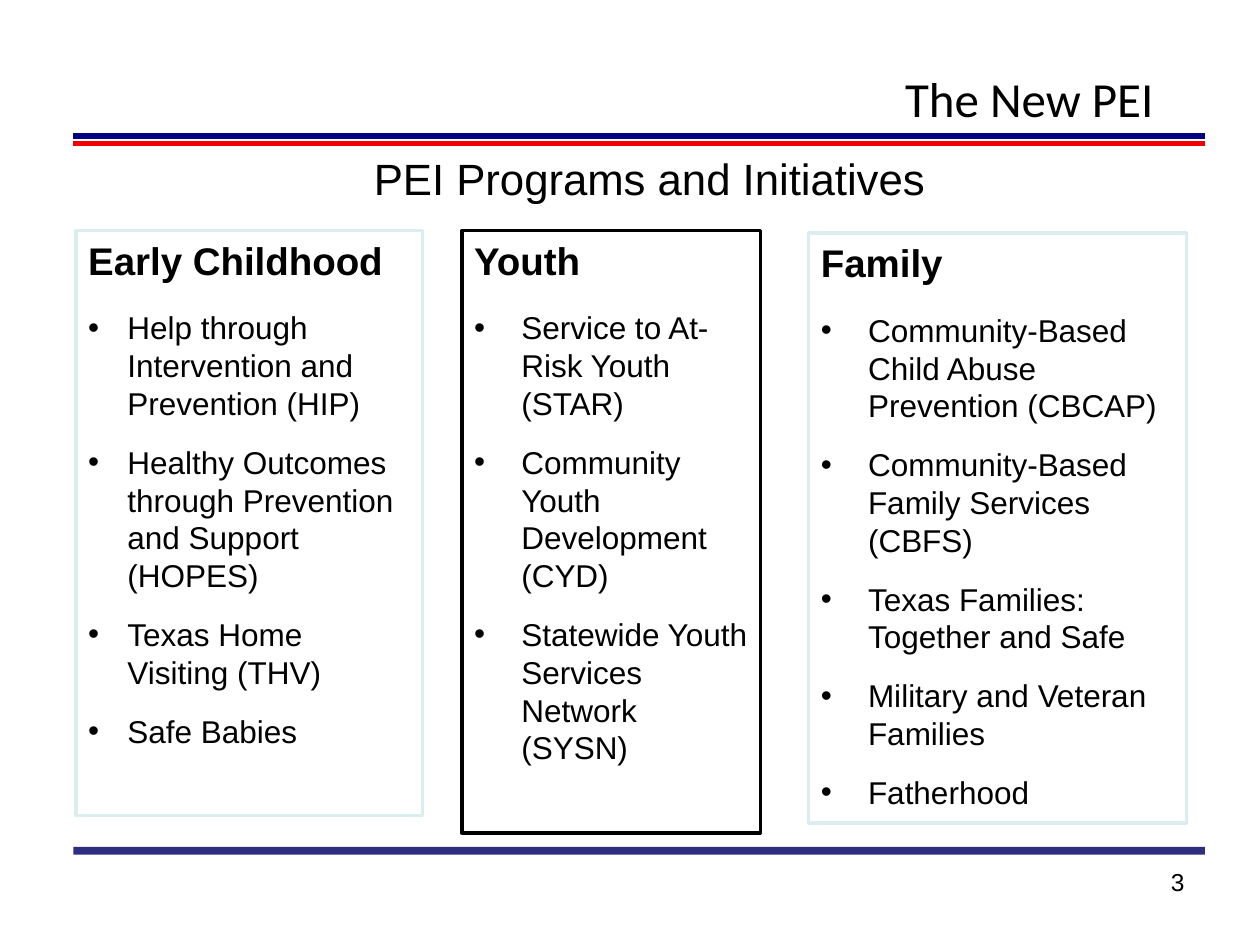
from pptx import Presentation, util as u
from pptx.dml.color import RGBColor
from pptx.enum import shapes, text
from pptx.oxml.ns import qn
from lxml import etree

COLORS = {"text": "000000", "box": "FFFFFF", "pale": "DAEDEF", "black": "000000",
          "navy": "000080", "red": "F00000", "footer": "000066"}
RULE_LEFT, RULE_RIGHT = 1.48, 24.29

# left, top, width, height, bullet indent (cm), border, heading, programs
COLUMNS = [
    (1.53, 4.65, 6.99, 11.79, 0.79, "pale", "Early Childhood",
     ["Help through Intervention and Prevention (HIP)",
      "Healthy Outcomes through Prevention and Support (HOPES)",
      "Texas Home Visiting (THV)",
      "Safe Babies"]),
    (9.31, 4.65, 6.02, 12.14, 0.95, "black", "Youth",
     ["Service to At-Risk Youth (STAR)",
      "Community Youth Development (CYD)",
      "Statewide Youth Services Network (SYSN)"]),
    (16.3, 4.7, 7.62, 11.89, 0.95, "pale", "Family",
     ["Community-Based Child Abuse Prevention (CBCAP)",
      "Community-Based Family Services (CBFS)",
      "Texas Families: Together and Safe",
      "Military and Veteran Families",
      "Fatherhood"]),
]


def rgb(name):
    return RGBColor.from_string(COLORS[name])


class SlideBuilder:
    """Holds the text style and the slide being built."""

    def __init__(self, s, font="Arial"):
        self.s = s
        self.font = font

    def style(self, p, size, align, bold=False, font=None):
        p.alignment = align
        p.font.name = font or self.font
        p.font.size = u.Pt(size)
        p.font.bold = bold
        p.font.color.rgb = rgb("text")

    def rule(self, y, color, width, opacity=None):
        line = self.s.shapes.add_connector(
            shapes.MSO_CONNECTOR.STRAIGHT,
            u.Cm(RULE_LEFT), u.Cm(y), u.Cm(RULE_RIGHT), u.Cm(y))
        line.line.color.rgb = rgb(color)
        line.line.width = u.Pt(width)
        props = line._element.spPr
        if opacity:
            etree.SubElement(next(props.iter(qn("a:srgbClr"))), qn("a:alpha"),
                             val=str(opacity * 1000))
        etree.SubElement(props, qn("a:effectLst"))

    def label(self, box, words, size, align, anchor=text.MSO_ANCHOR.TOP, font=None):
        tf = self.s.shapes.add_textbox(*map(u.Cm, box)).text_frame
        tf.word_wrap = True
        tf.vertical_anchor = anchor
        p = tf.paragraphs[0]
        p.text = words
        self.style(p, size, align, font=font)

    def bullet(self, p, indent):
        props = p._p.get_or_add_pPr()
        props.set("marL", str(u.Cm(indent)))
        props.set("indent", str(-u.Cm(indent)))
        etree.SubElement(props, qn("a:buFont"), typeface="Arial")
        etree.SubElement(props, qn("a:buChar"), char="•")

    def column(self, left, top, width, height, indent, border, heading, programs):
        sp = self.s.shapes.add_shape(shapes.MSO_SHAPE.RECTANGLE,
                                     *map(u.Cm, (left, top, width, height)))
        sp.shadow.inherit = False
        sp.fill.solid()
        sp.fill.fore_color.rgb = rgb("box")
        sp.line.color.rgb = rgb(border)
        sp.line.width = u.Pt(2)
        tf = sp.text_frame
        tf.word_wrap = True
        tf.vertical_anchor = text.MSO_ANCHOR.TOP
        p = tf.paragraphs[0]
        p.text = heading
        self.style(p, 22, text.PP_ALIGN.LEFT, bold=True)
        for i, program in enumerate(programs):
            p = tf.add_paragraph()
            p.text = program
            p.space_before = u.Pt(12 if i else 14.5)
            self.bullet(p, indent)
            self.style(p, 18, text.PP_ALIGN.LEFT)


def main():
    prs = Presentation()
    prs.slide_width, prs.slide_height = u.Cm(25.4), u.Cm(19.05)
    slide = SlideBuilder(prs.slides.add_slide(prs.slide_layouts[6]))
    slide.rule(2.74, "navy", 3)
    slide.rule(2.9, "red", 3)
    slide.rule(17.15, "footer", 4.5, opacity=82)
    slide.label((6.35, 0.76, 17.15, 2.41), "The New PEI", 28, text.PP_ALIGN.RIGHT,
                text.MSO_ANCHOR.MIDDLE, "Calibri")
    slide.label((18.21, 17.35, 5.92, 1.32), "3", 14, text.PP_ALIGN.RIGHT)
    for column in COLUMNS:
        slide.column(*column)
    slide.label((2.08, 2.93, 22.02, 1.32), "PEI Programs and Initiatives", 25,
                text.PP_ALIGN.CENTER)
    prs.save("out.pptx")


if __name__ == "__main__":
    main()
